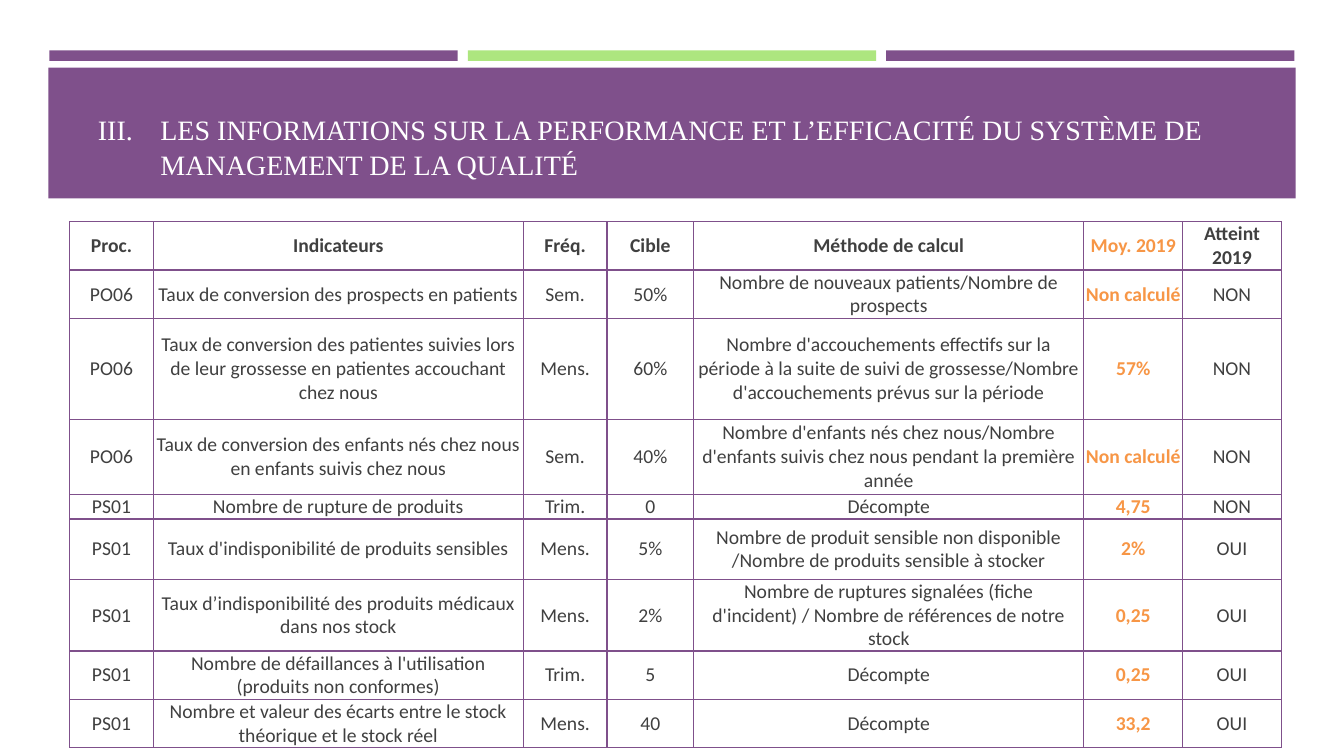
from dataclasses import astuple, dataclass

import pptx
import pptx.dml.color
import pptx.enum.shapes
import pptx.enum.text
import pptx.oxml
import pptx.oxml.ns
import pptx.slide
import pptx.table
import pptx.util

RGBColor = pptx.dml.color.RGBColor
PURPLE = RGBColor(0x7F, 0x50, 0x8B)
GREEN = RGBColor(0xAD, 0xE6, 0x7F)
ORANGE = RGBColor(0xF7, 0x96, 0x46)
GREY = RGBColor(0x40, 0x40, 0x40)
WHITE = RGBColor(0xFF, 0xFF, 0xFF)

SLIDE_WIDTH = pptx.util.Inches(13.33)
SLIDE_HEIGHT = pptx.util.Inches(7.5)

# Shares of the slide, in percent
BAR_LEFT, BAR_PITCH = 3.68, 31.13
COLUMN_SHARES = (6.23, 27.53, 6.23, 6.45, 29.03, 7.35, 7.35)
ROW_SHARES = (6.4, 6.4, 13.33, 10, 3.2, 8, 8, 6.4, 6.4)
AVERAGE_COLUMN = 5


@dataclass(frozen=True)
class Area:
    """A rectangle in percent of the slide's width and height."""
    left: float
    top: float
    width: float
    height: float

    def box(self) -> tuple[int, int, int, int]:
        return (across(self.left), down(self.top),
                across(self.width), down(self.height))


@dataclass(frozen=True)
class Band:
    area: Area
    color: RGBColor


@dataclass(frozen=True)
class Indicator:
    process: str
    name: str
    frequency: str
    target: str
    method: str
    average: str
    reached: str


BANDS = [
    Band(Area(BAR_LEFT + i * BAR_PITCH, 6.67, 30.38, 1.4), color)
    for i, color in enumerate((PURPLE, GREEN, PURPLE))
] + [Band(Area(3.6, 8.93, 92.8, 17.33), PURPLE)]

TITLE = ("LES INFORMATIONS SUR LA PERFORMANCE ET L’EFFICACITÉ "
         "DU SYSTÈME DE MANAGEMENT DE LA QUALITÉ")
TITLE_AREA = Area(6.53, 5.07, 86.87, 19.6)

HEADER = Indicator("Proc.", "Indicateurs", "Fréq.", "Cible",
                   "Méthode de calcul", "Moy. 2019", "Atteint 2019")
INDICATORS = [
    Indicator("PO06", "Taux de conversion des prospects en patients", "Sem.", "50%",
              "Nombre de nouveaux patients/Nombre de prospects",
              "Non calculé", "NON"),
    Indicator("PO06", "Taux de conversion des patientes suivies lors de leur "
              "grossesse en patientes accouchant chez nous", "Mens.", "60%",
              "Nombre d'accouchements effectifs sur la période à la suite de suivi "
              "de grossesse/Nombre d'accouchements prévus sur la période",
              "57%", "NON"),
    Indicator("PO06", "Taux de conversion des enfants nés chez nous en enfants "
              "suivis chez nous", "Sem.", "40%",
              "Nombre d'enfants nés chez nous/Nombre d'enfants suivis chez nous "
              "pendant la première année", "Non calculé", "NON"),
    Indicator("PS01", "Nombre de rupture de produits", "Trim.", "0",
              "Décompte", "4,75", "NON"),
    Indicator("PS01", "Taux d'indisponibilité de produits sensibles", "Mens.", "5%",
              "Nombre de produit sensible non disponible /Nombre de produits "
              "sensible à stocker", "2%", "OUI"),
    Indicator("PS01", "Taux d’indisponibilité des produits médicaux dans nos stock",
              "Mens.", "2%",
              "Nombre de ruptures signalées (fiche d'incident) / Nombre de "
              "références de notre stock", "0,25", "OUI"),
    Indicator("PS01", "Nombre de défaillances à l'utilisation (produits non "
              "conformes)", "Trim.", "5", "Décompte", "0,25", "OUI"),
    Indicator("PS01", "Nombre et valeur des écarts entre le stock théorique et le "
              "stock réel", "Mens.", "40", "Décompte", "33,2", "OUI"),
]


def across(share: float) -> int:
    return round(SLIDE_WIDTH * share / 100)


def down(share: float) -> int:
    return round(SLIDE_HEIGHT * share / 100)


def draw_band(slide: pptx.slide.Slide, band: Band) -> None:
    rectangle = slide.shapes.add_shape(
        pptx.enum.shapes.MSO_SHAPE.RECTANGLE, *band.area.box())
    rectangle.shadow.inherit = False
    rectangle.fill.solid()
    rectangle.fill.fore_color.rgb = band.color
    rectangle.line.fill.background()


def draw_title(slide: pptx.slide.Slide) -> None:
    title = slide.shapes.title
    title.left, title.top, title.width, title.height = TITLE_AREA.box()
    # Bring the title in front of the banner
    slide.shapes.element.append(title.element)
    frame = title.text_frame
    frame.text = TITLE
    frame.word_wrap = True
    frame.auto_size = pptx.enum.text.MSO_AUTO_SIZE.NONE
    frame.vertical_anchor = pptx.enum.text.MSO_ANCHOR.BOTTOM

    # Roman numbering starting at III
    paragraph = frame.paragraphs[0]
    paragraph.alignment = pptx.enum.text.PP_ALIGN.LEFT
    paragraph.line_spacing = 1.05
    properties = paragraph._p.get_or_add_pPr()
    indent = pptx.util.Inches(0.62)
    properties.set("marL", str(indent))
    properties.set("indent", str(-indent))
    properties.append(pptx.oxml.parse_xml(
        f'<a:buFont {pptx.oxml.ns.nsdecls("a")} typeface="+mj-lt"/>'))
    properties.append(pptx.oxml.parse_xml(
        f'<a:buAutoNum {pptx.oxml.ns.nsdecls("a")} type="romanUcPeriod" startAt="3"/>'))
    font = paragraph.runs[0].font
    font.name = "Times New Roman"
    font.size = pptx.util.Pt(20)
    font.color.rgb = WHITE


def border_cell(cell: pptx.table._Cell, bottom: float) -> None:
    properties = cell._tc.get_or_add_tcPr()
    for side, points in (("L", 1), ("R", 1), ("T", 1), ("B", bottom)):
        properties.append(pptx.oxml.parse_xml(
            f'<a:ln{side} {pptx.oxml.ns.nsdecls("a")} w="{pptx.util.Pt(points)}">'
            f'<a:solidFill><a:srgbClr val="{PURPLE}"/></a:solidFill></a:ln{side}>'))


def fill_cell(cell: pptx.table._Cell, text: str, is_header: bool,
              is_average: bool) -> None:
    border_cell(cell, bottom=2 if is_header else 1)
    cell.fill.background()
    cell.margin_left = cell.margin_right = cell.margin_top = cell.margin_bottom = 0
    cell.vertical_anchor = pptx.enum.text.MSO_ANCHOR.MIDDLE
    paragraph = cell.text_frame.paragraphs[0]
    paragraph.text = text
    paragraph.alignment = pptx.enum.text.PP_ALIGN.CENTER
    font = paragraph.runs[0].font
    font.name = "Calibri"
    font.size = pptx.util.Pt(14)
    font.bold = is_header or is_average
    font.color.rgb = ORANGE if is_average else GREY


def draw_indicators(slide: pptx.slide.Slide) -> None:
    area = Area(5.18, 29.33, sum(COLUMN_SHARES), sum(ROW_SHARES))
    indicators = slide.shapes.add_table(
        len(ROW_SHARES), len(COLUMN_SHARES), *area.box()).table
    indicators.first_row = indicators.horz_banding = False
    for column, share in zip(indicators.columns, COLUMN_SHARES):
        column.width = across(share)
    for row, share in zip(indicators.rows, ROW_SHARES):
        row.height = down(share)
    for r, indicator in enumerate([HEADER, *INDICATORS]):
        for c, text in enumerate(astuple(indicator)):
            fill_cell(indicators.cell(r, c), text, r == 0, c == AVERAGE_COLUMN)


def main() -> None:
    presentation = pptx.Presentation()
    presentation.slide_width = SLIDE_WIDTH
    presentation.slide_height = SLIDE_HEIGHT
    slide = presentation.slides.add_slide(presentation.slide_layouts[5])

    # Top bars and title banner
    for band in BANDS:
        draw_band(slide, band)
    # Table of quality indicators
    draw_indicators(slide)
    draw_title(slide)
    presentation.save("out.pptx")


if __name__ == "__main__":
    main()
